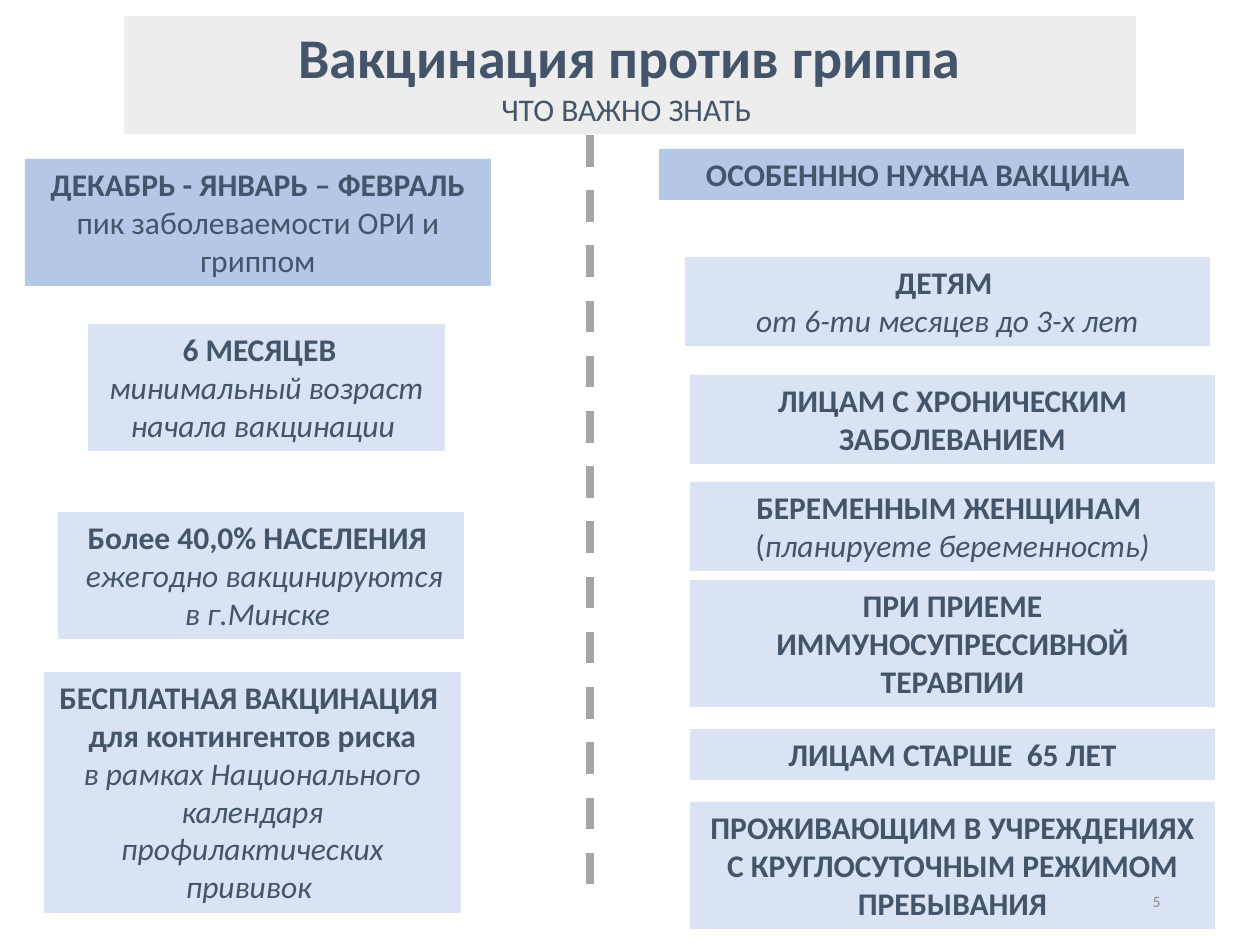
from lxml import etree
from pptx import Presentation
from pptx.dml.color import RGBColor
from pptx.enum.dml import MSO_LINE
from pptx.enum.shapes import MSO_CONNECTOR
from pptx.enum.text import MSO_ANCHOR, MSO_AUTO_SIZE, PP_ALIGN
from pptx.oxml.ns import qn
from pptx.util import Pt

STRAIGHT = MSO_CONNECTOR.STRAIGHT
DASH = MSO_LINE.DASH
TOP, MIDDLE = MSO_ANCHOR.TOP, MSO_ANCHOR.MIDDLE
GROW = MSO_AUTO_SIZE.SHAPE_TO_FIT_TEXT
CENTER, RIGHT = PP_ALIGN.CENTER, PP_ALIGN.RIGHT

PX = 914400 / 126
COLORS = {
    "title": "EDEDED",
    "head": "B4C7E7",
    "item": "DAE3F3",
    "text": "44546A",
    "divider": "A5A5A5",
    "number": "8C8C8C",
}
BOLD = {"size": Pt(18), "bold": True, "italic": False}
PLAIN = {"size": Pt(18), "bold": False, "italic": False}
ITALIC = {"size": Pt(18), "bold": False, "italic": True}
TITLE = {"size": Pt(32), "bold": True, "italic": False}
NUMBER = {"size": Pt(9), "bold": False, "italic": False}


def emu(*lengths):
    """Turn px into EMU."""
    return [round(n * PX) for n in lengths]


def write(sp, paragraphs, color="text", align=CENTER, anchor=TOP, auto_size=GROW):
    """Fill a shape with paragraphs, each a list of (text, format) runs."""
    tf = sp.text_frame
    for name, value in {"word_wrap": True, "auto_size": auto_size,
                        "vertical_anchor": anchor}.items():
        setattr(tf, name, value)
    for i, runs in enumerate(paragraphs):
        p = tf.add_paragraph() if i else tf.paragraphs[0]
        p.alignment = align
        for text, fmt in runs:
            r = p.add_run()
            r.text = text
            r.font.name = "Calibri"
            r.font.color.rgb = RGBColor.from_string(COLORS[color])
            for name, value in fmt.items():
                setattr(r.font, name, value)


prs = Presentation()
prs.slide_width, prs.slide_height = emu(1260, 945)
s = prs.slides.add_slide(prs.slide_layouts[5])

# Title band
title = s.shapes.title
title.left, title.top, title.width, title.height = emu(124, 16, 1012, 118)
title.fill.solid()
title.fill.fore_color.rgb = RGBColor.from_string(COLORS["title"])
write(title, [[("Вакцинация против гриппа", TITLE)], [("ЧТО ВАЖНО ЗНАТЬ ", PLAIN)]])

# Dashed divider between the columns
divider = s.shapes.add_connector(STRAIGHT, *emu(590, 135, 590, 890))
divider.line.color.rgb = RGBColor.from_string(COLORS["divider"])
divider.line.width = Pt(4.5)
divider.line.dash_style = DASH
etree.SubElement(divider._element.spPr, qn("a:effectLst"))

# Text boxes: fill, left, top, width, number of text lines, paragraphs
COL_X, COL_W = 690, 525
LINE_H, PADDING = 38, 13
boxes = [
    ("head", 25, 159, 466, 3, [
        [("ДЕКАБРЬ - ЯНВАРЬ – ФЕВРАЛЬ", BOLD)],
        [("пик заболеваемости ОРИ и гриппом", PLAIN)]]),
    ("item", 88, 324, 357, 3, [
        [("6 МЕСЯЦЕВ  ", BOLD)],
        [("минимальный возраст начала вакцинации ", ITALIC)]]),
    ("item", 58, 512, 406, 3, [
        [("Более 40,0% НАСЕЛЕНИЯ ", BOLD)],
        [(" ", BOLD), ("ежегодно вакцинируются в г.Минске ", ITALIC)]]),
    ("item", 44, 672, 417, 6, [
        [("БЕСПЛАТНАЯ ВАКЦИНАЦИЯ ", BOLD)],
        [("для контингентов риска", BOLD)],
        [("в рамках Национального календаря профилактических прививок ", ITALIC)]]),
    ("head", 659, 149, COL_W, 1, [[("ОСОБЕНННО НУЖНА ВАКЦИНА ", BOLD)]]),
    ("item", 685, 257, COL_W, 2, [
        [("ДЕТЯМ ", BOLD)],
        [("от 6-ти месяцев до 3-х лет", ITALIC)]]),
    ("item", COL_X, 375, COL_W, 2, [[("ЛИЦАМ С ХРОНИЧЕСКИМ ЗАБОЛЕВАНИЕМ", BOLD)]]),
    ("item", COL_X, 482, COL_W, 2, [
        [("БЕРЕМЕННЫМ ЖЕНЩИНАМ ", BOLD)],
        [("(", PLAIN), ("планируете беременность)", ITALIC)]]),
    ("item", COL_X, 580, COL_W, 3, [
        [("ПРИ ПРИЕМЕ ИММУНОСУПРЕССИВНОЙ ТЕРАВПИИ", BOLD)]]),
    ("item", COL_X, 729, COL_W, 1, [[("ЛИЦАМ СТАРШЕ  65 ЛЕТ", BOLD)]]),
    ("item", COL_X, 802, COL_W, 3, [
        [("ПРОЖИВАЮЩИМ В УЧРЕЖДЕНИЯХ С КРУГЛОСУТОЧНЫМ РЕЖИМОМ ПРЕБЫВАНИЯ", BOLD)]]),
]
for fill, left, top, width, lines, paragraphs in boxes:
    sp = s.shapes.add_textbox(*emu(left, top, width, lines * LINE_H + PADDING))
    sp.fill.solid()
    sp.fill.fore_color.rgb = RGBColor.from_string(COLORS[fill])
    write(sp, paragraphs)

# Slide number
number = s.shapes.add_textbox(*emu(890, 876, 283, 50))
write(number, [[("5", NUMBER)]], "number", RIGHT, MIDDLE, MSO_AUTO_SIZE.NONE)

prs.save("out.pptx")
